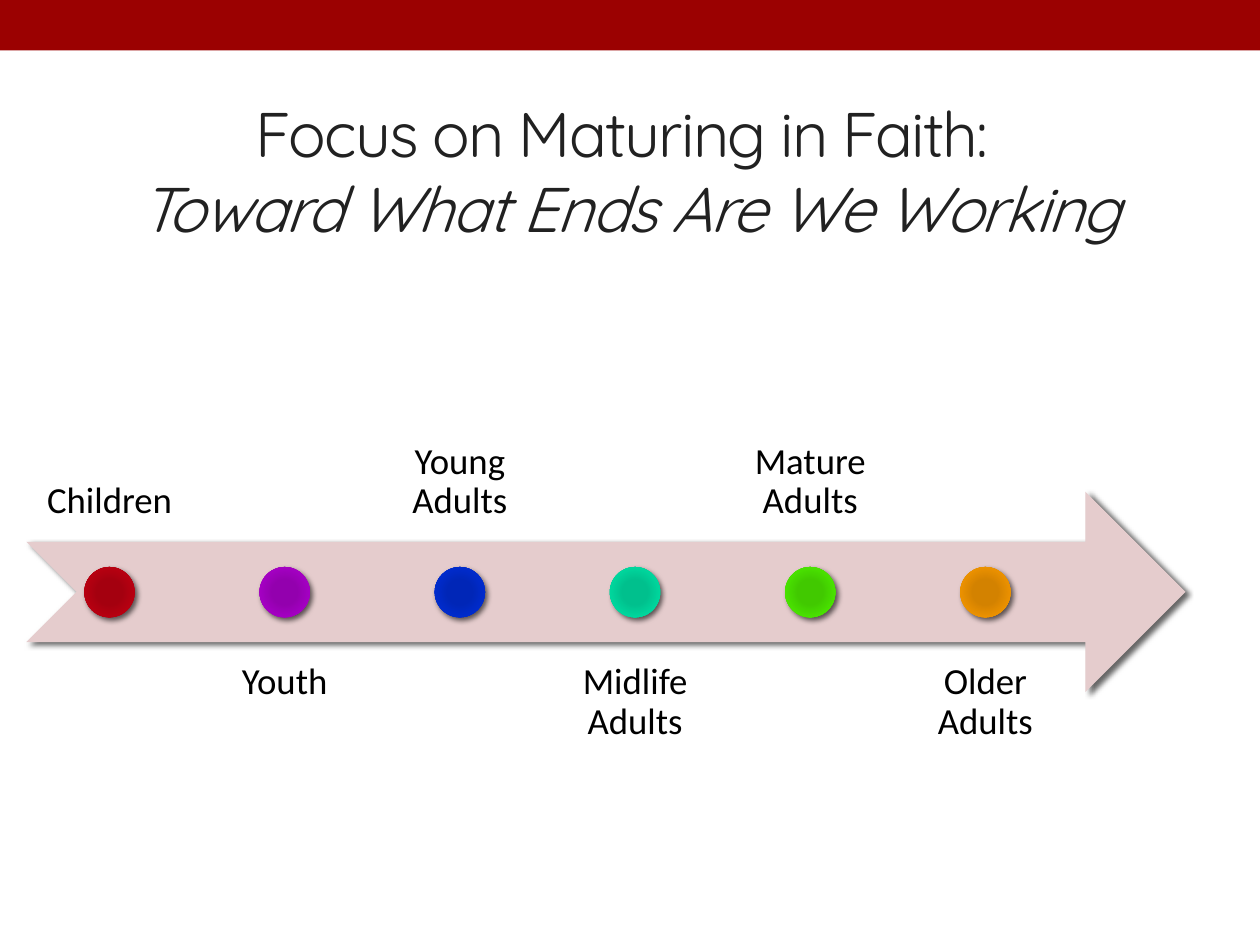
from dataclasses import dataclass

from lxml import etree
from pptx import Presentation
from pptx.dml.color import RGBColor
from pptx.enum import shapes, text
from pptx.oxml import ns
from pptx.util import Pt

SHAPE = shapes.MSO_SHAPE
ANCHOR = text.MSO_ANCHOR
CENTER = text.PP_ALIGN.CENTER


@dataclass(frozen=True)
class Theme:
    bar: str = "9B0101"
    arrow: str = "E5CCCD"
    title: str = "212121"
    label: str = "000000"
    shadow: str = "000000"
    head: str = "Quicksand"
    body: str = "Calibri"
    big: float = 36
    small: float = 21


THEME = Theme()
STAGES = [
    ("Children", ("A4000F", "B70011", "B50B1B")),
    ("Youth", ("9300AE", "A400C2", "A40CBF")),
    ("Young Adults", ("0026B7", "002BCC", "0C34C9")),
    ("Midlife Adults", ("00C08D", "00D69D", "0DD49F")),
    ("Mature Adults", ("41C900", "49E100", "51DE0D")),
    ("Older Adults", ("D38200", "EB9100", "E8950E")),
]
LEFT, PITCH, WIDE, HIGH = 15.1, 100.1, 95, 114.5
DOT, DOT_TOP = 28.8, 324
ABOVE, BELOW = 195.1, 367.2


def apply(item, **values):
    for name, value in values.items():
        setattr(item, name, value)


def place(item, left, top, width, height):
    apply(item, left=Pt(left), top=Pt(top), width=Pt(width), height=Pt(height))


def style(font, name, size, color):
    apply(font, name=name, size=Pt(size))
    font.color.rgb = RGBColor.from_string(color)


def node(parent, tag, **attrs):
    values = {key: str(value) for key, value in attrs.items()}
    return etree.SubElement(parent, ns.qn(f"a:{tag}"), values)


def add_shape(slide, kind, box, color=None):
    shape = slide.shapes.add_shape(kind, *map(Pt, box))
    shape.shadow.inherit = False
    shape.line.fill.background()
    if color:
        shape.fill.solid()
        shape.fill.fore_color.rgb = RGBColor.from_string(color)
    else:
        shape.fill.background()
    return shape


def cast(shape):
    effects = shape._element.spPr.find(ns.qn("a:effectLst"))
    outer = node(effects, "outerShdw", blurRad=Pt(3), dist=Pt(2),
                 dir=45 * 60000, algn="ctr", rotWithShape=0)
    color = node(outer, "srgbClr", val=THEME.shadow)
    node(color, "alpha", val=60000)


def shade(shape, colors):
    props = shape._element.spPr
    blank = props.find(ns.qn("a:noFill"))
    grad = node(props, "gradFill", rotWithShape=1)
    stops = node(grad, "gsLst")
    inner, middle, outer = colors
    for pos, color in ((0, inner), (34, inner), (70, middle), (100, outer)):
        node(node(stops, "gs", pos=pos * 1000), "srgbClr", val=color)
    round_fill = node(grad, "path", path="circle")
    node(round_fill, "fillToRect", **dict.fromkeys("ltrb", 100000))
    props.replace(blank, grad)


def add_title(slide):
    title = slide.shapes.title
    place(title, 36, 41.8, 648, 110.2)
    frame = title.text_frame
    apply(frame, word_wrap=True, vertical_anchor=ANCHOR.MIDDLE)
    para = frame.paragraphs[0]
    para.alignment = CENTER
    first = para.add_run()
    first.text = "Focus on Maturing in Faith: "
    para.add_line_break()
    second = para.add_run()
    second.text = "Toward What Ends Are We Working"
    second.font.italic = True
    for run in (first, second):
        style(run.font, THEME.head, THEME.big, THEME.title)
        run.font._element.set("spc", "-100")


def add_label(slide, words, left, top, anchor):
    box = slide.shapes.add_textbox(*map(Pt, (left, top, WIDE, HIGH)))
    frame = box.text_frame
    apply(frame, word_wrap=True, vertical_anchor=anchor)
    for side in ("left", "top", "right", "bottom"):
        setattr(frame, f"margin_{side}", Pt(11.5))
    para = frame.paragraphs[0]
    apply(para, alignment=CENTER, line_spacing=0.9, space_after=Pt(7.35))
    run = para.add_run()
    run.text = words
    style(run.font, THEME.body, THEME.small, THEME.label)


def add_stage(slide, index, words, colors):
    left = LEFT + index * PITCH
    top, anchor = (BELOW, ANCHOR.TOP) if index % 2 else (ABOVE, ANCHOR.BOTTOM)
    add_label(slide, words, left, top, anchor)
    dot = add_shape(slide, SHAPE.OVAL,
                    (left + (WIDE - DOT) / 2, DOT_TOP, DOT, DOT))
    shade(dot, colors)
    cast(dot)


def main():
    deck = Presentation()
    apply(deck, slide_width=Pt(720), slide_height=Pt(540))
    slide = deck.slides.add_slide(deck.slide_layouts[5])
    add_shape(slide, SHAPE.RECTANGLE, (0, 0, 720, 28.8), THEME.bar)
    add_title(slide)
    arrow = add_shape(slide, SHAPE.NOTCHED_RIGHT_ARROW,
                      (LEFT, 281, 662.4, HIGH), THEME.arrow)
    cast(arrow)
    for index, (words, colors) in enumerate(STAGES):
        add_stage(slide, index, words, colors)
    deck.save("out.pptx")


if __name__ == "__main__":
    main()
